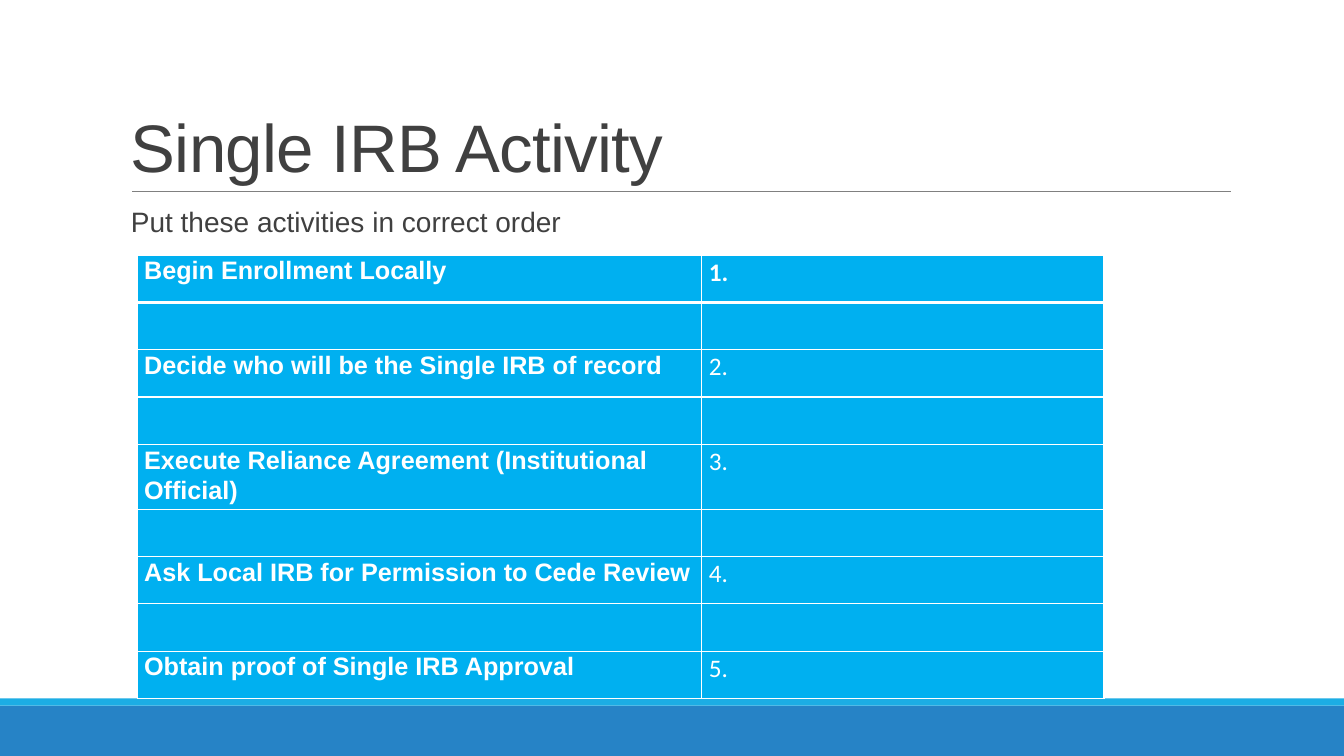
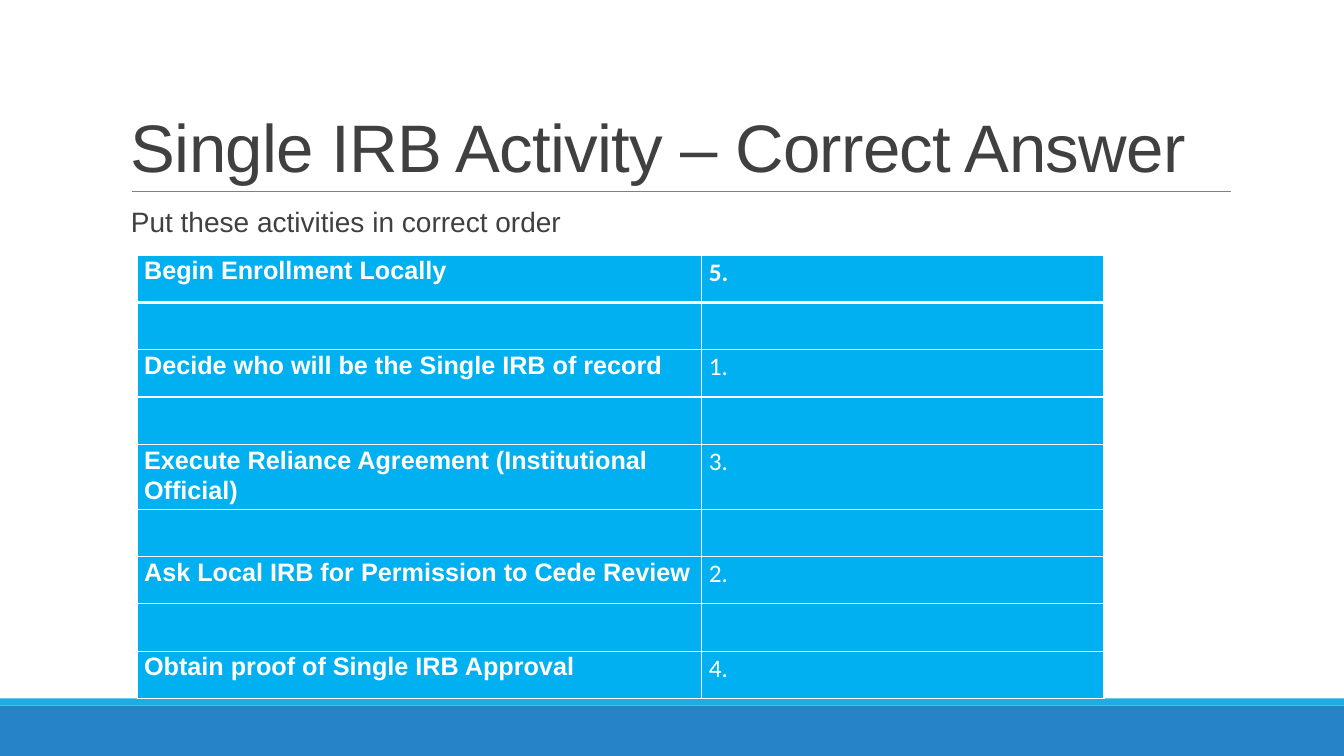
from lxml import etree
from pptx import Presentation
from pptx.dml.color import RGBColor
from pptx.enum.shapes import MSO_CONNECTOR, MSO_SHAPE
from pptx.enum.text import MSO_ANCHOR
from pptx.oxml.ns import qn
from pptx.util import Inches, Pt

RECTANGLE = MSO_SHAPE.RECTANGLE
STRAIGHT = MSO_CONNECTOR.STRAIGHT
TOP, BOTTOM = MSO_ANCHOR.TOP, MSO_ANCHOR.BOTTOM

SLIDE_WIDTH, SLIDE_HEIGHT = 13.33, 7.5
FOOTER_HEIGHT, STRIPE_HEIGHT = 0.5, 0.07
FOOTER_BLUE, STRIPE_BLUE, CELL_BLUE = "2683C6", "1CADE4", "00B0F0"
TEXT_GRAY, RULE_GRAY, WHITE = "404040", "808080", "FFFFFF"
HEADING_FONT, NUMBER_FONT = "Arial", "Calibri"

TITLE_BOX = (1.2, 0.31, 11, 1.59)
PROMPT_BOX = (1.2, 2.02, 11, 0.5)
TABLE_BOX = (1.36, 2.53, 9.59, 4.23)
ACTIVITY_SHARE = 0.584

PROMPT = "Put these activities in correct order"
ACTIVITIES = [
    "Begin Enrollment Locally",
    "Decide who will be the Single IRB of record",
    "Execute Reliance Agreement (Institutional Official)",
    "Ask Local IRB for Permission to Cede Review",
    "Obtain proof of Single IRB Approval",
]
SLIDES = [
    ("Single IRB Activity", [1, 2, 3, 4, 5]),
    ("Single IRB Activity – Correct Answer", [5, 1, 3, 2, 4]),
]


def color(hex_string):
    return RGBColor.from_string(hex_string)


def inches(box):
    return [Inches(length) for length in box]


def style_paragraph(paragraph, font_name, size, hex_string, line_spacing, bold=False):
    font = paragraph.font
    font.name, font.size, font.bold = font_name, Pt(size), bold
    font.color.rgb = color(hex_string)
    paragraph.line_spacing = line_spacing


def add_band(slide, box, hex_string):
    band = slide.shapes.add_shape(RECTANGLE, *inches(box))
    band.shadow.inherit = False
    band.fill.solid()
    band.fill.fore_color.rgb = color(hex_string)
    band.line.fill.background()


def add_footer(slide):
    footer_top = SLIDE_HEIGHT - FOOTER_HEIGHT
    add_band(slide, (0, footer_top, SLIDE_WIDTH, FOOTER_HEIGHT), FOOTER_BLUE)
    add_band(slide, (0, footer_top - STRIPE_HEIGHT, SLIDE_WIDTH, STRIPE_HEIGHT), STRIPE_BLUE)


def add_text(slide, box, text, size, line_spacing, anchor):
    frame = slide.shapes.add_textbox(*inches(box)).text_frame
    frame.word_wrap = True
    frame.vertical_anchor = anchor
    paragraph = frame.paragraphs[0]
    paragraph.text = text
    style_paragraph(paragraph, HEADING_FONT, size, TEXT_GRAY, line_spacing)
    return paragraph


def add_title(slide, box, text):
    """Place a tightly spaced title with a thin rule along the bottom of its box."""
    paragraph = add_text(slide, box, text, 48, 0.85, BOTTOM)
    paragraph._p.pPr.find(qn("a:defRPr")).set("spc", "-50")
    left, top, width, height = box
    rule_left, rule_top = left + 0.11, top + height
    ends = (rule_left, rule_top, rule_left + 10.9, rule_top)
    rule = slide.shapes.add_connector(STRAIGHT, *inches(ends))
    rule.line.color.rgb = color(RULE_GRAY)
    rule.line.width = Pt(0.5)
    etree.SubElement(rule._element.spPr, qn("a:effectLst"))


def add_prompt(slide, box):
    paragraph = add_text(slide, box, PROMPT, 20, 0.9, TOP)
    paragraph.space_before, paragraph.space_after = Pt(12), Pt(2)


def set_borders(cell, top_width, bottom_width):
    """Draw white borders, which come before the fill in the cell's XML."""
    properties = cell._tc.get_or_add_tcPr()
    widths = {"lnL": 1, "lnR": 1, "lnT": top_width, "lnB": bottom_width}
    for position, (side, width) in enumerate(widths.items()):
        border = etree.Element(qn(f"a:{side}"), w=str(Pt(width)))
        fill = etree.SubElement(border, qn("a:solidFill"))
        etree.SubElement(fill, qn("a:srgbClr"), val=WHITE)
        properties.insert(position, border)


def fill_cell(cell, text, font_name, bold):
    cell.fill.solid()
    cell.fill.fore_color.rgb = color(CELL_BLUE)
    cell.margin_left = cell.margin_right = Inches(0.07)
    cell.margin_top = cell.margin_bottom = 0
    paragraph = cell.text_frame.paragraphs[0]
    paragraph.text = text
    style_paragraph(paragraph, font_name, 18, WHITE, 1.07, bold)


def add_activity_table(slide, box, numbers):
    """List each activity beside its number, with an empty row between activities."""
    width, height = box[2:]
    row_count = 2 * len(ACTIVITIES) - 1
    table = slide.shapes.add_table(row_count, 2, *inches(box)).table
    table.first_row = table.horz_banding = False
    table.columns[0].width = Inches(width * ACTIVITY_SHARE)
    table.columns[1].width = Inches(width * (1 - ACTIVITY_SHARE))
    for index, row in enumerate(table.rows):
        row.height = Inches(height / row_count)
        activity, number = "", ""
        if index % 2 == 0:
            activity = ACTIVITIES[index // 2]
            number = f"{numbers[index // 2]}."
        activity_cell, number_cell = row.cells
        fill_cell(activity_cell, activity, HEADING_FONT, True)
        fill_cell(number_cell, number, NUMBER_FONT, index == 0)
        for cell in row.cells:
            set_borders(cell, 3 if index == 1 else 1, 3 if index == 0 else 1)


def add_activity_slide(presentation, title, numbers):
    slide = presentation.slides.add_slide(presentation.slide_layouts[6])
    add_footer(slide)
    add_title(slide, TITLE_BOX, title)
    add_prompt(slide, PROMPT_BOX)
    add_activity_table(slide, TABLE_BOX, numbers)


def main():
    presentation = Presentation()
    presentation.slide_width = Inches(SLIDE_WIDTH)
    presentation.slide_height = Inches(SLIDE_HEIGHT)
    for title, numbers in SLIDES:
        add_activity_slide(presentation, title, numbers)
    presentation.save("out.pptx")


if __name__ == "__main__":
    main()
